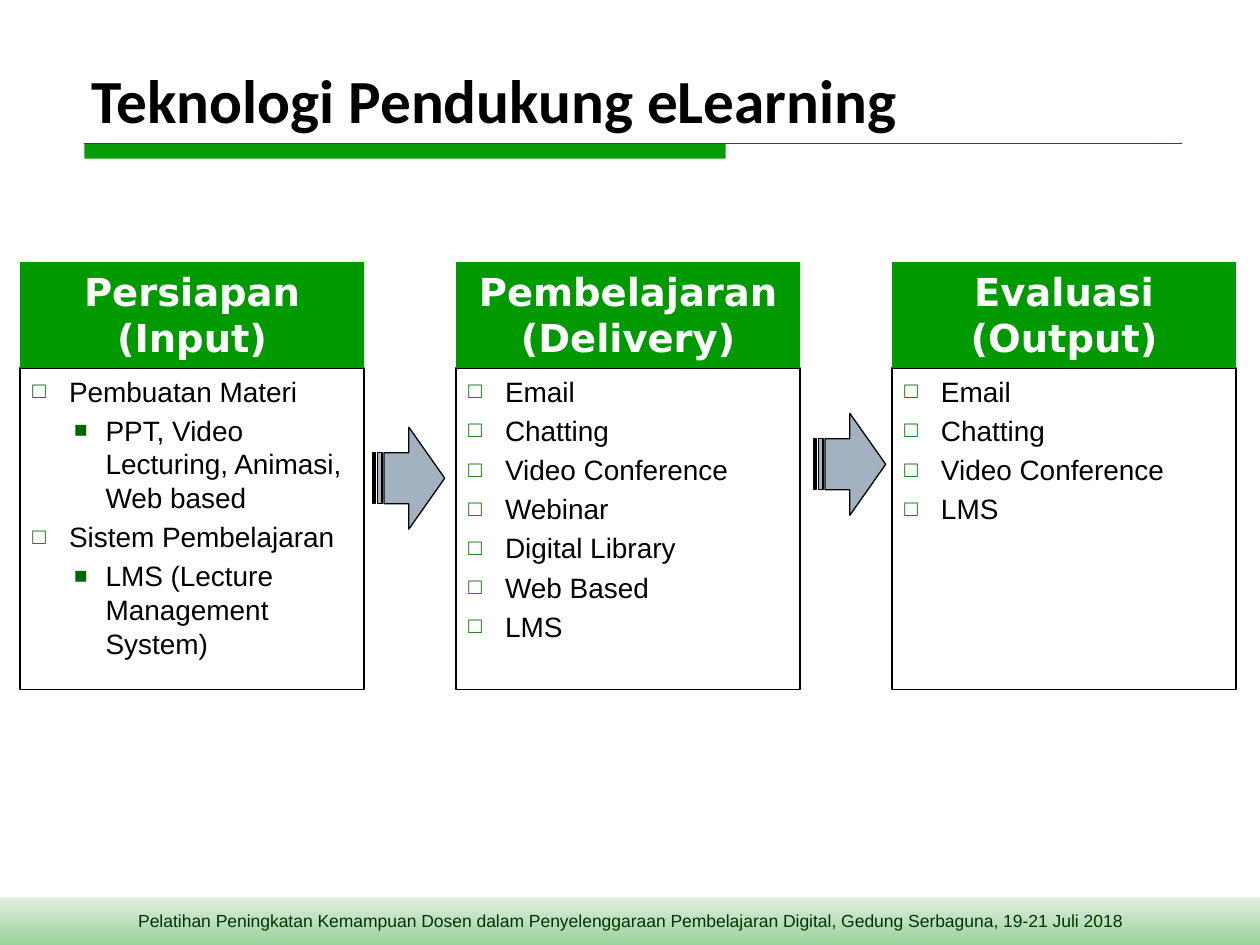
import pptx
import pptx.util
import pptx.dml.color
import pptx.enum.shapes
import pptx.enum.text
import pptx.oxml.ns
from dataclasses import dataclass
from lxml import etree

Inches = pptx.util.Inches
Pt = pptx.util.Pt
Shape = pptx.enum.shapes.MSO_SHAPE
Align = pptx.enum.text.PP_ALIGN
Anchor = pptx.enum.text.MSO_ANCHOR
qn = pptx.oxml.ns.qn


@dataclass(frozen=True)
class Theme:
    green: str = "009900"
    bar: str = "089C08"
    dark: str = "006600"
    deep: str = "003300"
    pale: str = "E0EFE0"
    mint: str = "95CF95"
    steel: str = "A3B2C1"
    black: str = "000000"
    white: str = "FFFFFF"
    sans: str = "Arial"
    face: str = "Calibri"
    bold: str = "DejaVu Sans"
    title: int = 35
    head: int = 22
    body: int = 16
    foot: int = 10
    rule: float = 0.75


THEME = Theme()
COLUMNS = [
    (["Persiapan", "(Input)"], [
        (0, "Pembuatan Materi"),
        (1, "PPT, Video Lecturing, Animasi, Web based"),
        (0, "Sistem Pembelajaran"),
        (1, "LMS (Lecture Management System)"),
    ]),
    (["Pembelajaran (Delivery)"], [
        (0, item) for item in (
            "Email", "Chatting", "Video Conference", "Webinar",
            "Digital Library", "Web Based", "LMS")
    ]),
    (["Evaluasi (Output)"], [
        (0, item) for item in ("Email", "Chatting", "Video Conference", "LMS")
    ]),
]
BULLETS = [("□", 0.29, 0.29), ("■", 0.58, 0.25)]


def color(code):
    return pptx.dml.color.RGBColor.from_string(code)


def block(slide, box, fill=None, line=None, kind=Shape.RECTANGLE):
    shape = slide.shapes.add_shape(kind, *map(Inches, box))
    shape.shadow.inherit = False
    if fill:
        shape.fill.solid()
        shape.fill.fore_color.rgb = color(fill)
    else:
        shape.fill.background()
    if line:
        shape.line.color.rgb = color(line)
        shape.line.width = Pt(THEME.rule)
    else:
        shape.line.fill.background()
    return shape


def write(shape, lines, font, size, ink, bold=False, align=Align.LEFT,
          anchor=Anchor.TOP):
    frame = shape.text_frame
    frame.word_wrap = True
    frame.vertical_anchor = anchor
    for index, line in enumerate(lines):
        para = frame.add_paragraph() if index else frame.paragraphs[0]
        para.alignment = align
        run = para.add_run()
        run.text = line
        run.font.name = font
        run.font.size = Pt(size)
        run.font.bold = bold
        run.font.color.rgb = color(ink)
    return frame.paragraphs


def bullet(para, level):
    mark, left, hang = BULLETS[level]
    para.level = level
    para.space_before = Pt(0.2 * THEME.body)
    props = para._p.get_or_add_pPr()
    props.set("marL", str(Inches(left)))
    props.set("indent", str(-Inches(hang)))
    tint = etree.SubElement(props, qn("a:buClr"))
    etree.SubElement(tint, qn("a:srgbClr"), val=THEME.dark)
    etree.SubElement(props, qn("a:buSzPct"), val="80000")
    etree.SubElement(props, qn("a:buFont"), typeface=THEME.sans)
    etree.SubElement(props, qn("a:buChar"), char=mark)


def header(slide, box):
    left, top, width, height = box
    title = slide.shapes.add_textbox(*map(Inches, box))
    write(title, ["Teknologi Pendukung eLearning"], THEME.face, THEME.title,
          THEME.black, bold=True, anchor=Anchor.BOTTOM)
    start, base = left + 0.04, top + height + 0.01
    block(slide, (start, base, 5.09, 0.12), THEME.bar)
    rule = slide.shapes.add_connector(
        pptx.enum.shapes.MSO_CONNECTOR.STRAIGHT,
        Inches(start), Inches(base), Inches(left + width), Inches(base))
    rule.line.color.rgb = color(THEME.dark)
    rule.line.width = Pt(THEME.rule)
    etree.SubElement(rule._element.spPr, qn("a:effectLst"))


def column(slide, box, head, items):
    left, top, width, height = box
    cap = 0.84
    panel = block(slide, (left, top + cap, width, height - cap),
                  line=THEME.black)
    paras = write(panel, [text for _, text in items], THEME.sans, THEME.body,
                  THEME.black)
    for para, (level, _) in zip(paras, items):
        bullet(para, level)
    label = block(slide, (left, top, width, cap), THEME.green)
    write(label, head, THEME.bold, THEME.head, THEME.white, bold=True,
          align=Align.CENTER)


def arrow(slide, box):
    block(slide, box, THEME.steel, THEME.black, Shape.STRIPED_RIGHT_ARROW)


def footer(slide, box):
    left, top, width, height = box
    band = block(slide, box, THEME.pale)
    band.fill.gradient()
    band.fill.gradient_angle = 270
    for stop, code, place in zip(band.fill.gradient_stops,
                                 (THEME.pale, THEME.mint), (0, 1)):
        stop.color.rgb = color(code)
        stop.position = place
    note = slide.shapes.add_textbox(
        Inches(left + 0.18), Inches(top + 0.05), Inches(9.64), Inches(0.27))
    write(note, ["Pelatihan Peningkatan Kemampuan Dosen dalam Penyelenggaraan "
                 "Pembelajaran Digital, Gedung Serbaguna, 19-21 Juli 2018"],
          THEME.sans, THEME.foot, THEME.deep, align=Align.CENTER)


def main():
    deck = pptx.Presentation()
    deck.slide_width, deck.slide_height = Inches(10), Inches(7.5)
    slide = deck.slides.add_slide(deck.slide_layouts[6])
    footer(slide, (0, 7.12, 10.02, 0.41))
    header(slide, (0.63, 0.33, 8.75, 0.8))
    for index, (head, items) in enumerate(COLUMNS):
        column(slide, (0.16 + 3.46 * index, 2.08, 2.73, 3.39), head, items)
    for left, top in ((2.96, 3.39), (6.46, 3.28)):
        arrow(slide, (left, top, 0.57, 0.81))
    deck.save("out.pptx")


if __name__ == "__main__":
    main()
